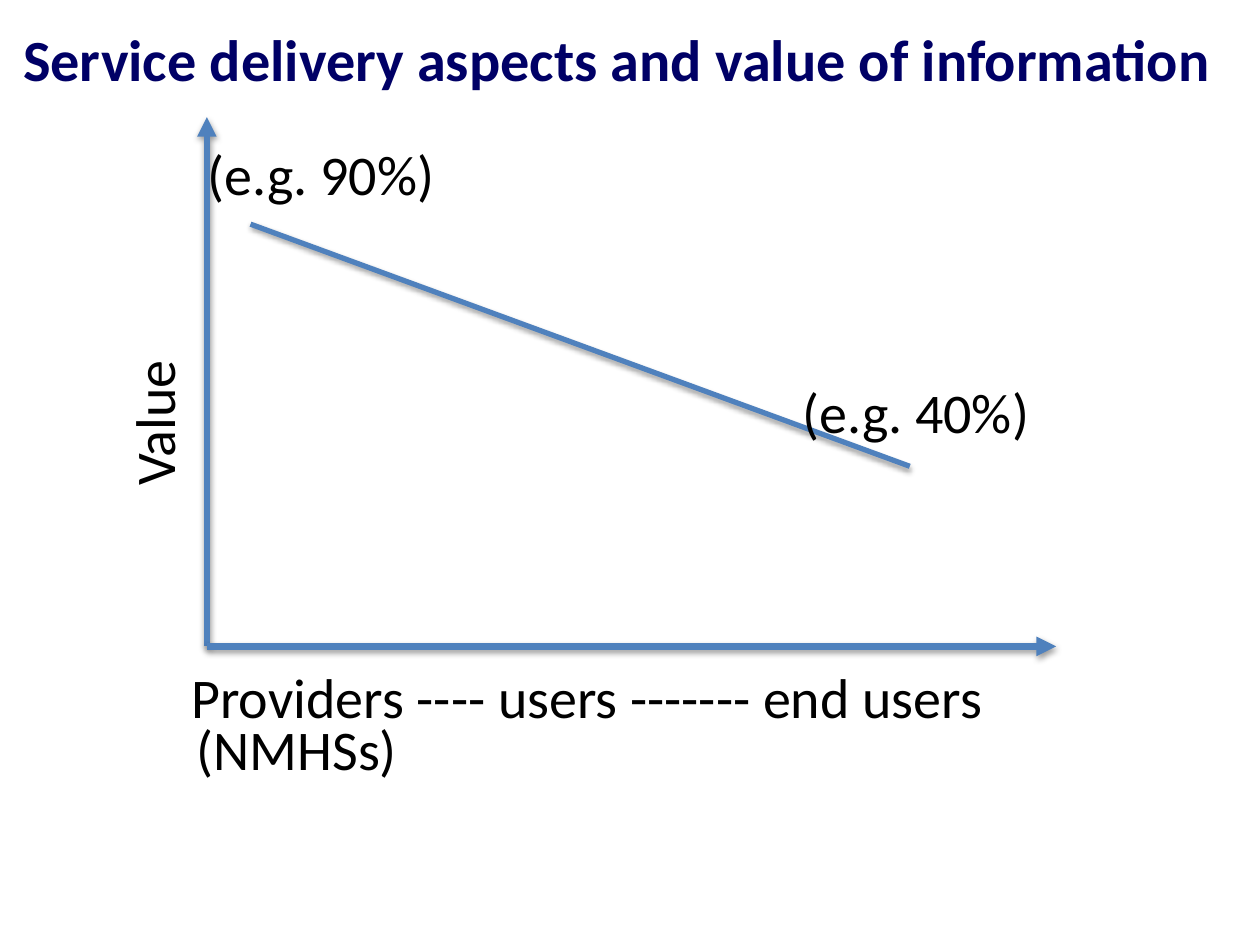
"""Build a slide on how the value of information falls from providers to end users."""
from dataclasses import dataclass

from lxml import etree
from pptx import Presentation
from pptx.dml.color import RGBColor
from pptx.enum.shapes import MSO_CONNECTOR
from pptx.enum.text import MSO_ANCHOR, MSO_AUTO_SIZE, PP_ALIGN
from pptx.oxml.ns import qn
from pptx.util import Cm, Pt

STRAIGHT = MSO_CONNECTOR.STRAIGHT
MIDDLE, TOP = MSO_ANCHOR.MIDDLE, MSO_ANCHOR.TOP
CENTER, LEFT = PP_ALIGN.CENTER, PP_ALIGN.LEFT
FIXED = MSO_AUTO_SIZE.NONE


@dataclass(frozen=True)
class Theme:
    """Colours, font and type sizes of the slide."""
    font: str = "Calibri"
    head: RGBColor = RGBColor(0x00, 0x00, 0x66)
    ink: RGBColor = RGBColor(0x00, 0x00, 0x00)
    line: RGBColor = RGBColor(0x4F, 0x81, 0xBD)
    head_size: float = 33.3
    size: float = 32


@dataclass(frozen=True)
class Label:
    """A line of text with its box in centimetres."""
    text: str
    left: float
    top: float
    width: float
    turn: int = 0


@dataclass(frozen=True)
class Line:
    """A straight line with its ends in centimetres."""
    start: tuple[float, float]
    end: tuple[float, float]
    weight: float
    arrow: bool = False


THEME = Theme()
LABEL_HIGH = 1.62
ORIGIN = (4.17, 13.03)
LINES = (
    Line(ORIGIN, (ORIGIN[0], 2.36), 3.75, arrow=True),
    Line(ORIGIN, (21.29, ORIGIN[1]), 3.75, arrow=True),
    Line((5.05, 4.52), (18.34, 9.4), 3),
)
LABELS = (
    Label("Value", 1.55, 7.7, 3.07, turn=270),
    Label("Providers ---- users ------- end users", 3.61, 13.23, 16.84),
    Label("(NMHSs)", 3.71, 14.27, 4.85),
    Label("(e.g. 90%)", 3.94, 2.69, 5.38),
    Label("(e.g. 40%)", 15.93, 7.49, 5.38),
)


def write(shape, text: str, *, size: float = THEME.size, color: RGBColor = THEME.ink,
          bold: bool = False, align=LEFT, anchor=TOP, wrap: bool = False) -> None:
    """Put formatted text into a shape."""
    frame = shape.text_frame
    frame.auto_size = FIXED
    frame.word_wrap = wrap
    frame.vertical_anchor = anchor
    para = frame.paragraphs[0]
    para.alignment = align
    run = para.add_run()
    run.text = text
    font = run.font
    font.name, font.size, font.bold = THEME.font, Pt(size), bold
    font.color.rgb = color


def place(shape, left: float, top: float, width: float, height: float) -> None:
    """Move and size a shape in centimetres."""
    shape.left, shape.top = Cm(left), Cm(top)
    shape.width, shape.height = Cm(width), Cm(height)


def draw_line(slide, item: Line) -> None:
    """Draw a line that keeps the soft shadow of the theme."""
    ends = [Cm(value) for value in item.start + item.end]
    shape = slide.shapes.add_connector(STRAIGHT, *ends)
    shape.line.color.rgb = THEME.line
    shape.line.width = Pt(item.weight)
    if item.arrow:
        stroke = shape.line._get_or_add_ln()
        etree.SubElement(stroke, qn("a:tailEnd"), type="triangle")


def draw_label(slide, item: Label) -> None:
    """Draw a text label."""
    box = slide.shapes.add_textbox(0, 0, 0, 0)
    place(box, item.left, item.top, item.width, LABEL_HIGH)
    box.rotation = item.turn
    write(box, item.text)


def main() -> None:
    """Build and save the slide."""
    deck = Presentation()
    deck.slide_width, deck.slide_height = Cm(25.4), Cm(19.05)
    slide = deck.slides.add_slide(deck.slide_layouts[5])
    for line in LINES:
        draw_line(slide, line)
    for label in LABELS:
        draw_label(slide, label)
    title = slide.shapes.title
    place(title, 0, 0.03, 25.15, 2.29)
    write(title, "Service delivery aspects and value of information ",
          size=THEME.head_size, color=THEME.head, bold=True,
          align=CENTER, anchor=MIDDLE, wrap=True)
    deck.save("out.pptx")


if __name__ == "__main__":
    main()
